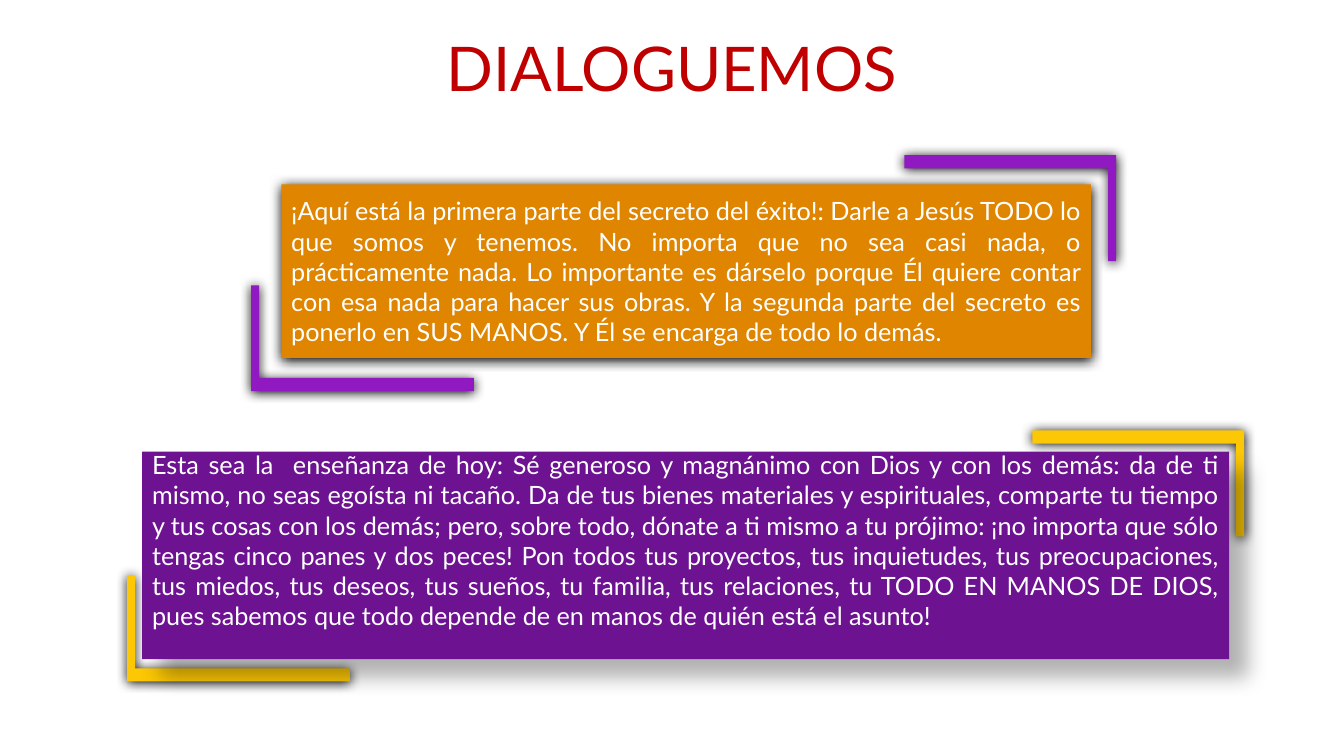
from dataclasses import dataclass

from lxml import etree
from pptx import Presentation
from pptx.dml.color import RGBColor
from pptx.enum.shapes import MSO_SHAPE
from pptx.enum.text import MSO_ANCHOR, PP_ALIGN
from pptx.oxml.ns import qn
from pptx.util import Emu, Pt

RECTANGLE = MSO_SHAPE.RECTANGLE
MIDDLE = MSO_ANCHOR.MIDDLE
CENTER, JUSTIFY = PP_ALIGN.CENTER, PP_ALIGN.JUSTIFY
PX = 9144  # 100 px to the inch


@dataclass(frozen=True)
class Theme:
    font: str = "Lato"
    title_size: int = 44
    body_size: int = 18
    red: str = "C00000"
    white: str = "FFFFFF"
    orange: str = "E08500"
    violet: str = "9119C1"
    yellow: str = "FCC704"
    purple: str = "6D1391"


@dataclass(frozen=True)
class Shadow:
    opacity: int  # percent
    blur: float  # points
    distance: float  # points
    angle: int  # degrees


GLOW = Shadow(100, 8.5, 1, 90)
DROP = Shadow(30, 15, 18, 45)


class SlideBuilder:
    def __init__(self, slide, theme):
        self.slide = slide
        self.theme = theme

    def paint(self, shape, color, shadow):
        shape.fill.solid()
        shape.fill.fore_color.rgb = RGBColor.from_string(color)
        shape.line.fill.background()
        shape.shadow.inherit = False
        effects = shape._element.spPr.find(qn("a:effectLst"))
        outer = etree.SubElement(
            effects, qn("a:outerShdw"),
            blurRad=str(Pt(shadow.blur)), dist=str(Pt(shadow.distance)),
            dir=str(shadow.angle * 60000), algn="ctr", rotWithShape="0")
        black = etree.SubElement(outer, qn("a:srgbClr"), val="000000")
        etree.SubElement(black, qn("a:alpha"), val=str(shadow.opacity * 1000))

    def set_text(self, shape, text, size, color, align):
        frame = shape.text_frame
        frame.word_wrap = True
        frame.vertical_anchor = MIDDLE
        frame.text = text
        paragraph = frame.paragraphs[0]
        paragraph.alignment = align
        font = paragraph.runs[0].font
        font.name = self.theme.font
        font.size = Pt(size)
        font.color.rgb = RGBColor.from_string(color)

    def title(self, text, *box):
        heading = self.slide.shapes.add_textbox(*(Emu(v * PX) for v in box))
        self.set_text(heading, text, self.theme.title_size, self.theme.red, CENTER)

    def panel(self, text, color, shadow, *box):
        panel = self.slide.shapes.add_shape(RECTANGLE, *(Emu(v * PX) for v in box))
        self.paint(panel, color, shadow)
        self.set_text(panel, text, self.theme.body_size, self.theme.white, JUSTIFY)
        return panel

    def bracket(self, color, x, y, reach_x, reach_y):
        """L shape from its outer corner; the signs of the reaches set its direction."""
        inner_x = x + (8 if reach_x > 0 else -8)
        inner_y = y + (13 if reach_y > 0 else -13)
        end_x, end_y = x + reach_x, y + reach_y
        outline = self.slide.shapes.build_freeform(x, y, scale=PX)
        outline.add_line_segments([
            (end_x, y), (end_x, inner_y), (inner_x, inner_y),
            (inner_x, end_y), (x, end_y)], close=True)
        self.paint(outline.convert_to_shape(), color, GLOW)


SECRET = (
    "¡Aquí está la primera parte del secreto del éxito!: Darle a Jesús TODO lo que "
    "somos y tenemos. No importa que no sea casi nada, o prácticamente nada. Lo "
    "importante es dárselo porque Él quiere contar con esa nada para hacer sus obras. "
    "Y la segunda parte del secreto es ponerlo en SUS MANOS. Y Él se encarga de todo "
    "lo demás.")
TEACHING = (
    "Esta sea la  enseñanza de hoy: Sé generoso y magnánimo con Dios y con los demás: "
    "da de ti mismo, no seas egoísta ni tacaño. Da de tus bienes materiales y "
    "espirituales, comparte tu tiempo y tus cosas con los demás; pero, sobre todo, "
    "dónate a ti mismo a tu prójimo: ¡no importa que sólo tengas cinco panes y dos "
    "peces! Pon todos tus proyectos, tus inquietudes, tus preocupaciones, tus miedos, "
    "tus deseos, tus sueños, tu familia, tus relaciones, tu TODO EN MANOS DE DIOS, "
    "pues sabemos que todo depende de en manos de quién está el asunto!")


def main():
    deck = Presentation()
    deck.slide_width, deck.slide_height = Emu(1333 * PX), Emu(750 * PX)
    theme = Theme()
    page = SlideBuilder(deck.slides.add_slide(deck.slide_layouts[6]), theme)

    # Title
    page.title("DIALOGUEMOS", 0, 25, 1333, 83)

    # The secret, with violet brackets
    page.bracket(theme.violet, 249, 388, 221, -105)
    page.bracket(theme.violet, 1107, 154, -210, 105)
    page.panel(SECRET, theme.orange, GLOW, 279, 183, 803, 172)

    # The teaching, with yellow brackets
    page.bracket(theme.yellow, 126, 676, 221, -105)
    page.bracket(theme.yellow, 1234, 427, -210, 105)
    teaching = page.panel(TEACHING, theme.purple, DROP, 141, 448, 1078, 206)
    teaching.text_frame.margin_top = 0
    teaching.text_frame.margin_bottom = Emu(30 * PX)

    deck.save("out.pptx")


if __name__ == "__main__":
    main()
